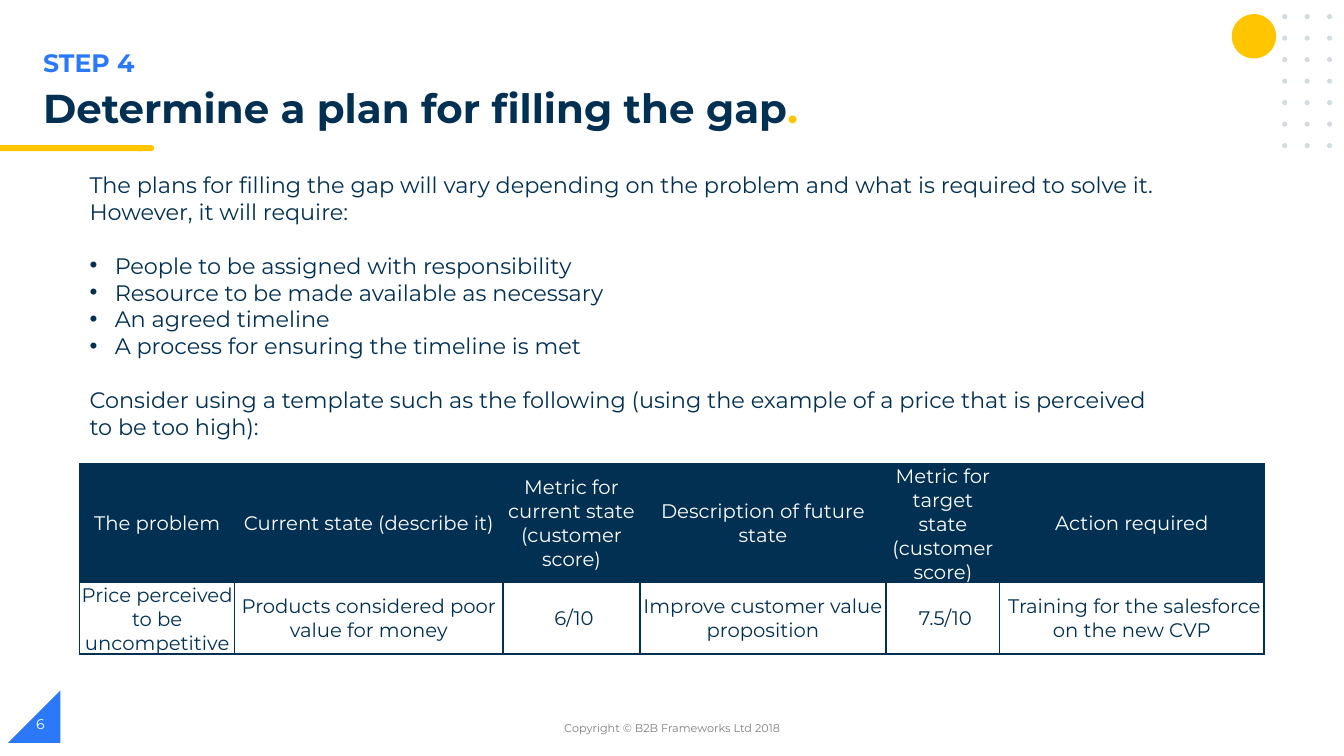
import dataclasses

import pptx
import pptx.dml.color
import pptx.enum.shapes
import pptx.enum.text
import pptx.oxml
import pptx.oxml.ns
import pptx.util

SHAPE = pptx.enum.shapes.MSO_SHAPE
ALIGN = pptx.enum.text.PP_ALIGN
ANCHOR = pptx.enum.text.MSO_ANCHOR
SLIDE_WIDTH = pptx.util.Inches(13.33)
SLIDE_HEIGHT = pptx.util.Inches(7.5)
GRID_COLUMNS = 160
GRID_ROWS = 90


@dataclasses.dataclass(frozen=True)
class Theme:
    font: str = "Montserrat"
    navy: str = "023053"
    blue: str = "2B79F8"
    yellow: str = "FFC600"
    dot: str = "D1DBE0"
    grey: str = "7F7F7F"
    white: str = "FFFFFF"
    title: float = 28.8
    step: float = 18
    body: float = 16
    table: float = 14
    page: float = 10
    footer: float = 8
    section_gap: float = 19.2


THEME = Theme()

INTRODUCTION = (
    "The plans for filling the gap will vary depending on the problem "
    "and what is required to solve it. However, it will require:"
)
REQUIREMENTS = [
    "People to be assigned with responsibility",
    "Resource to be made available as necessary",
    "An agreed timeline",
    "A process for ensuring the timeline is met",
]
TEMPLATE_NOTE = (
    "Consider using a template such as the following (using the example "
    "of a price that is perceived to be too high):"
)
PLAN_COLUMNS = [18.48, 31.92, 16.32, 29.28, 13.56, 31.44]
PLAN_ROWS = [11.88, 7.92]
PLAN = [
    [
        "The problem",
        "Current state (describe it)",
        "Metric for current state (customer score)",
        "Description of future state",
        "Metric for target state (customer score)",
        "Action required",
    ],
    [
        "Price perceived to be uncompetitive",
        "Products considered poor value for money",
        " 6/10",
        "Improve customer value proposition",
        " 7.5/10",
        " Training for the salesforce on the new CVP",
    ],
]


def columns(count):
    return round(SLIDE_WIDTH * count / GRID_COLUMNS)


def rows(count):
    return round(SLIDE_HEIGHT * count / GRID_ROWS)


def place(left, top, width, height):
    return columns(left), rows(top), columns(width), rows(height)


def rgb(color):
    return pptx.dml.color.RGBColor.from_string(color)


def style_font(font, size, color, bold=False):
    font.name = THEME.font
    font.size = pptx.util.Pt(size)
    font.bold = bold
    font.color.rgb = rgb(color)


def add_block(shapes, kind, area, color):
    shape = shapes.add_shape(kind, *place(*area))
    shape.shadow.inherit = False
    shape.fill.solid()
    shape.fill.fore_color.rgb = rgb(color)
    shape.line.fill.background()
    return shape


def add_frame(slide, area, anchor=ANCHOR.TOP):
    frame = slide.shapes.add_textbox(*place(*area)).text_frame
    frame.word_wrap = True
    frame.vertical_anchor = anchor
    return frame


def add_label(slide, area, text, size, color, bold=False, align=ALIGN.LEFT, anchor=ANCHOR.MIDDLE):
    paragraph = add_frame(slide, area, anchor).paragraphs[0]
    paragraph.text = text
    paragraph.alignment = align
    style_font(paragraph.font, size, color, bold)
    return paragraph


def add_bullet(paragraph):
    properties = paragraph._p.get_or_add_pPr()
    indent = pptx.util.Inches(0.25)
    properties.set("marL", str(indent))
    properties.set("indent", str(-indent))
    namespace = pptx.oxml.ns.nsdecls("a")
    for element in (
        f'<a:buClr {namespace}><a:srgbClr val="{THEME.navy}"/></a:buClr>',
        f'<a:buFont {namespace} typeface="Arial"/>',
        f'<a:buChar {namespace} char="•"/>',
    ):
        properties.append(pptx.oxml.parse_xml(element))


def add_body(slide, area):
    frame = add_frame(slide, area)
    texts = [INTRODUCTION, *REQUIREMENTS, TEMPLATE_NOTE]
    for index, text in enumerate(texts):
        paragraph = frame.add_paragraph() if index else frame.paragraphs[0]
        paragraph.text = text
        if text in REQUIREMENTS:
            add_bullet(paragraph)
        if text in (REQUIREMENTS[0], TEMPLATE_NOTE):
            paragraph.space_before = pptx.util.Pt(THEME.section_gap)
        style_font(paragraph.font, THEME.body, THEME.navy)


def add_borders(cell):
    properties = cell._tc.get_or_add_tcPr()
    namespace = pptx.oxml.ns.nsdecls("a")
    for side in ("lnL", "lnR", "lnT", "lnB"):
        properties.append(pptx.oxml.parse_xml(
            f'<a:{side} {namespace} w="{pptx.util.Pt(1)}"><a:solidFill>'
            f'<a:srgbClr val="{THEME.navy}"/></a:solidFill></a:{side}>'
        ))


def fill_cell(cell, text, header):
    cell.margin_left = cell.margin_right = columns(0.12)
    cell.margin_top = rows(0.12)
    cell.margin_bottom = 0
    cell.vertical_anchor = ANCHOR.MIDDLE
    add_borders(cell)
    if header:
        cell.fill.solid()
        cell.fill.fore_color.rgb = rgb(THEME.navy)
    else:
        cell.fill.background()
    paragraph = cell.text_frame.paragraphs[0]
    paragraph.text = text
    paragraph.alignment = ALIGN.CENTER
    style_font(paragraph.font, THEME.table, THEME.white if header else THEME.navy)


def add_plan(slide, left, top):
    area = place(left, top, sum(PLAN_COLUMNS), sum(PLAN_ROWS))
    table = slide.shapes.add_table(len(PLAN), len(PLAN_COLUMNS), *area).table
    table.horz_banding = False
    for column, width in zip(table.columns, PLAN_COLUMNS):
        column.width = columns(width)
    for row, height, texts in zip(table.rows, PLAN_ROWS, PLAN):
        row.height = rows(height)
        for cell, text in zip(row.cells, texts):
            fill_cell(cell, text, texts is PLAN[0])


def add_decoration(slide):
    triangle = add_block(slide.shapes, SHAPE.RIGHT_TRIANGLE, (0.96, 82.2, 6.24, 6.24), THEME.blue)
    triangle._element.spPr.get_or_add_xfrm().set("flipH", "1")
    add_block(slide.shapes, SHAPE.OVAL, (146.64, 1.68, 5.28, 5.28), THEME.yellow)
    dots = slide.shapes.add_group_shape().shapes
    for row in range(7):
        for column in range(3):
            area = (152.64 + 2.67 * column, 1.68 + 2.56 * row, 0.6, 0.6)
            add_block(dots, SHAPE.OVAL, area, THEME.dot)
    underline = slide.shapes.add_group_shape().shapes
    add_block(underline, SHAPE.FLOWCHART_TERMINATOR, (16.08, 17.28, 2.28, 0.72), THEME.yellow)
    add_block(underline, SHAPE.RECTANGLE, (0, 17.28, 16.92, 0.72), THEME.yellow)


def add_title(slide, area):
    title = add_label(slide, area, "Determine a plan for filling the gap", THEME.title, THEME.navy, bold=True)
    title.line_spacing = 0.9
    stop = title.add_run()
    stop.text = "."
    stop.font.color.rgb = rgb(THEME.yellow)


def main():
    presentation = pptx.Presentation()
    presentation.slide_width = SLIDE_WIDTH
    presentation.slide_height = SLIDE_HEIGHT
    slide = presentation.slides.add_slide(presentation.slide_layouts[6])
    add_decoration(slide)
    add_label(slide, (3.96, 5.04, 80.28, 4.8), "STEP 4", THEME.step, THEME.blue, bold=True, anchor=ANCHOR.TOP)
    add_title(slide, (3.96, 9.84, 100.56, 6.72))
    add_body(slide, (9.48, 19.8, 130.44, 33.48))
    add_plan(slide, 9.48, 55.2)
    add_label(slide, (53.04, 84.24, 54, 4.8), "Copyright © B2B Frameworks Ltd 2018", THEME.footer, THEME.grey, align=ALIGN.CENTER)
    add_label(slide, (3.12, 83.76, 36, 4.8), "6", THEME.page, THEME.white)
    presentation.save("out.pptx")


if __name__ == "__main__":
    main()
